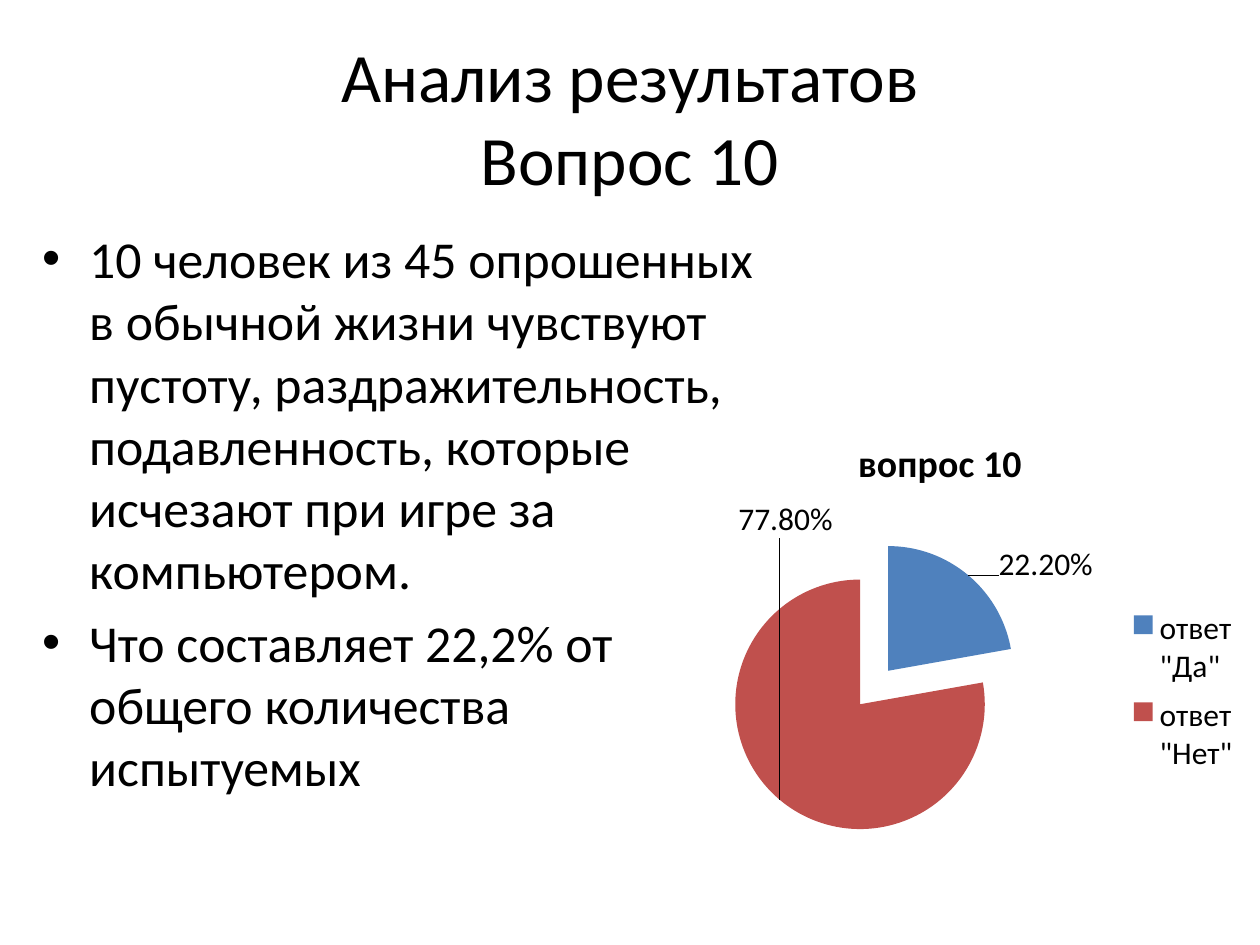
from lxml.etree import SubElement
from pptx import Presentation
from pptx.chart.data import CategoryChartData
from pptx.dml.color import RGBColor
from pptx.enum.chart import XL_CHART_TYPE, XL_LABEL_POSITION, XL_LEGEND_POSITION
from pptx.enum.text import MSO_ANCHOR, PP_ALIGN
from pptx.oxml import parse_xml
from pptx.oxml.ns import nsdecls, qn
from pptx.util import Cm, Pt

BLACK = RGBColor(0x00, 0x00, 0x00)
BLUE = RGBColor(0x4F, 0x81, 0xBD)
RED = RGBColor(0xC0, 0x50, 0x4D)
FACE = "Calibri"


def style(font, size):
    font.name = FACE
    font.size = Pt(size)
    font.color.rgb = BLACK


def layout(x, y, w=None, h=None, inner=False):
    """Manual chart layout: a label shift, or a placed area when sized."""
    tags = [("x", x), ("y", y)]
    if w:
        tags = [("xMode", "edge"), ("yMode", "edge")] + tags
        tags += [("w", w), ("h", h)]
    if inner:
        tags.insert(0, ("layoutTarget", "inner"))
    body = "".join(f'<c:{tag} val="{val}"/>' for tag, val in tags)
    return parse_xml(f'<c:layout {nsdecls("c")}><c:manualLayout>{body}'
                     '</c:manualLayout></c:layout>')


deck = Presentation()
deck.slide_width, deck.slide_height = Cm(25.4), Cm(19.05)
slide = deck.slides.add_slide(deck.slide_layouts[5])

# Title
title = slide.shapes.title
title.left, title.top = Cm(1.27), Cm(0.76)
title.width, title.height = Cm(22.86), Cm(3.18)
frame = title.text_frame
frame.text = "Анализ результатов\vВопрос 10"
frame.vertical_anchor = MSO_ANCHOR.MIDDLE
para = frame.paragraphs[0]
para.alignment = PP_ALIGN.CENTER
for run in para.runs:
    style(run.font, 39.6)

# Findings
items = [
    "10 человек из 45 опрошенных в обычной жизни чувствуют пустоту, "
    "раздражительность, подавленность, которые исчезают при игре за "
    "компьютером.",
    "Что составляет 22,2% от общего количества испытуемых",
]
box = slide.shapes.add_textbox(Cm(0.6), Cm(4.45), Cm(15.47), Cm(11.43))
frame = box.text_frame
frame.word_wrap = True
for i, item in enumerate(items):
    para = frame.add_paragraph() if i else frame.paragraphs[0]
    para.text = item
    para.space_before = Pt(6)
    style(para.runs[0].font, 29.6)
    props = para._p.get_or_add_pPr()
    props.set("marL", str(Cm(0.95)))
    props.set("indent", str(-Cm(0.95)))
    SubElement(props, qn("a:buFont"), typeface="Arial")
    SubElement(props, qn("a:buChar"), char="•")

# Pie
data = CategoryChartData(number_format="0.00%")
data.categories = ['ответ "Да"', 'ответ "Нет"']
data.add_series("вопрос 10", (0.222, 0.778))
chart = slide.shapes.add_chart(XL_CHART_TYPE.PIE, Cm(12.5), Cm(8.33),
                               Cm(12.9), Cm(9.32), data).chart
style(chart.font, 18)
chart.has_title = True
chart.chart_title.text_frame.text = "вопрос 10"
head = chart.chart_title.text_frame.paragraphs[0].runs[0].font
style(head, 21.6)
head.bold = True
chart.has_legend = True
legend = chart.legend
legend.position = XL_LEGEND_POSITION.RIGHT
legend.include_in_layout = False

area = chart._chartSpace.chart.plotArea
for part in (area, legend._element):
    for old in part.findall(qn("c:layout")):
        part.remove(old)
area.insert(0, layout(0.18, 0.36, 0.39, 0.54, inner=True))
legend._element.find(qn("c:legendPos")).addnext(
    layout(0.79, 0.4, 0.18, 0.4))

plot = chart.plots[0]
plot.vary_by_categories = True
pie = plot.series[0]
labels = pie.data_labels
labels.show_value = True
labels.number_format = "0.00%"
labels.number_format_is_linked = False
labels.position = XL_LABEL_POSITION.OUTSIDE_END
lead = labels._element.find(qn("c:showLeaderLines"))
if lead is None:
    lead = SubElement(labels._element, qn("c:showLeaderLines"))
lead.set("val", "1")

shifts = [(0.04, 0.03), (0.09, -0.66)]
for i, (color, shift) in enumerate(zip((BLUE, RED), shifts)):
    point = pie.points[i]
    point.format.fill.solid()
    point.format.fill.fore_color.rgb = color
    point.data_label.position = XL_LABEL_POSITION.OUTSIDE_END
    labels._element.findall(qn("c:dLbl"))[i].insert(1, layout(*shift))

# Pull the first slice out
slice_xml = pie._element.find(qn("c:dPt"))
burst = parse_xml(f'<c:explosion {nsdecls("c")} val="35"/>')
slice_xml.find(qn("c:spPr")).addprevious(burst)

deck.save("out.pptx")
